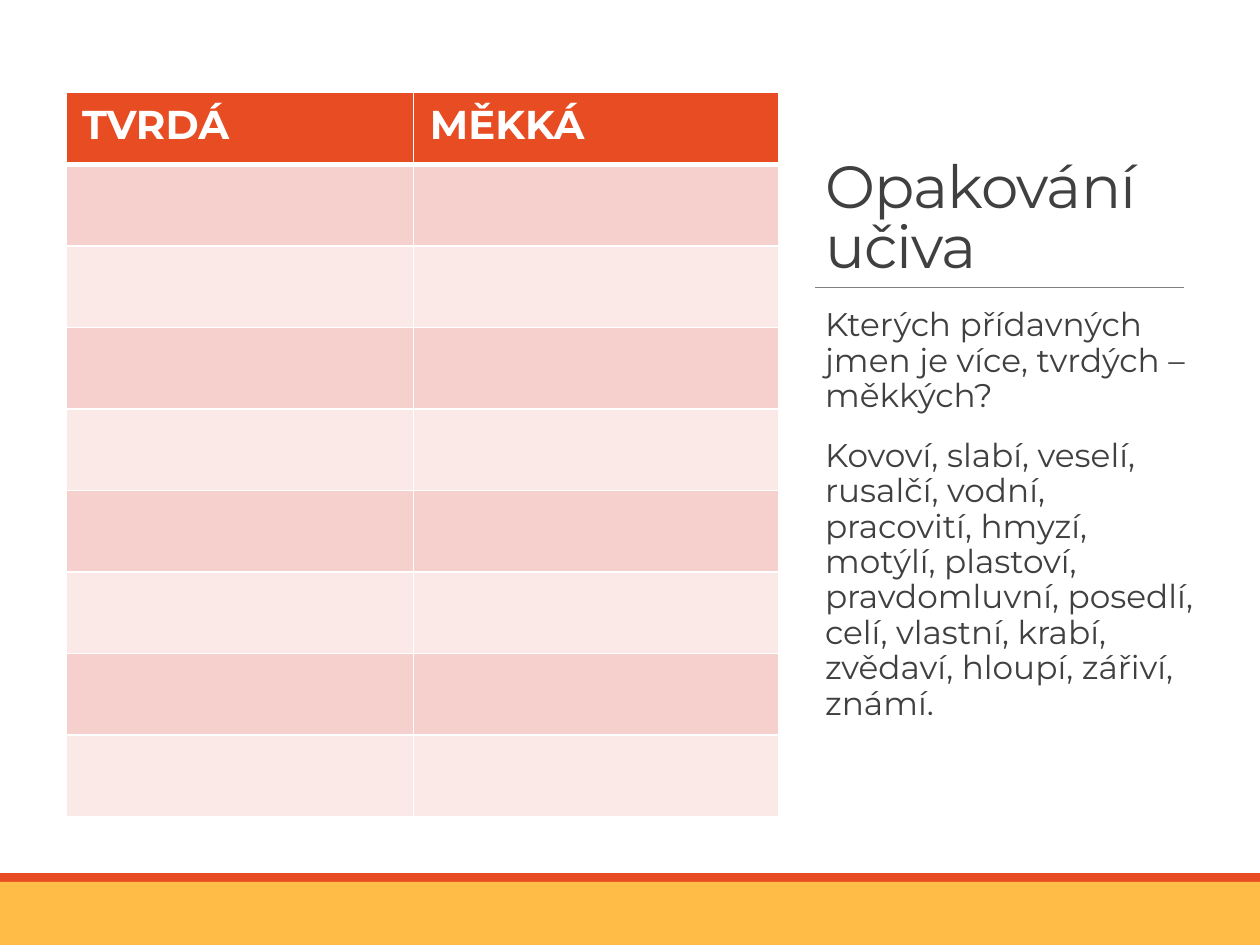
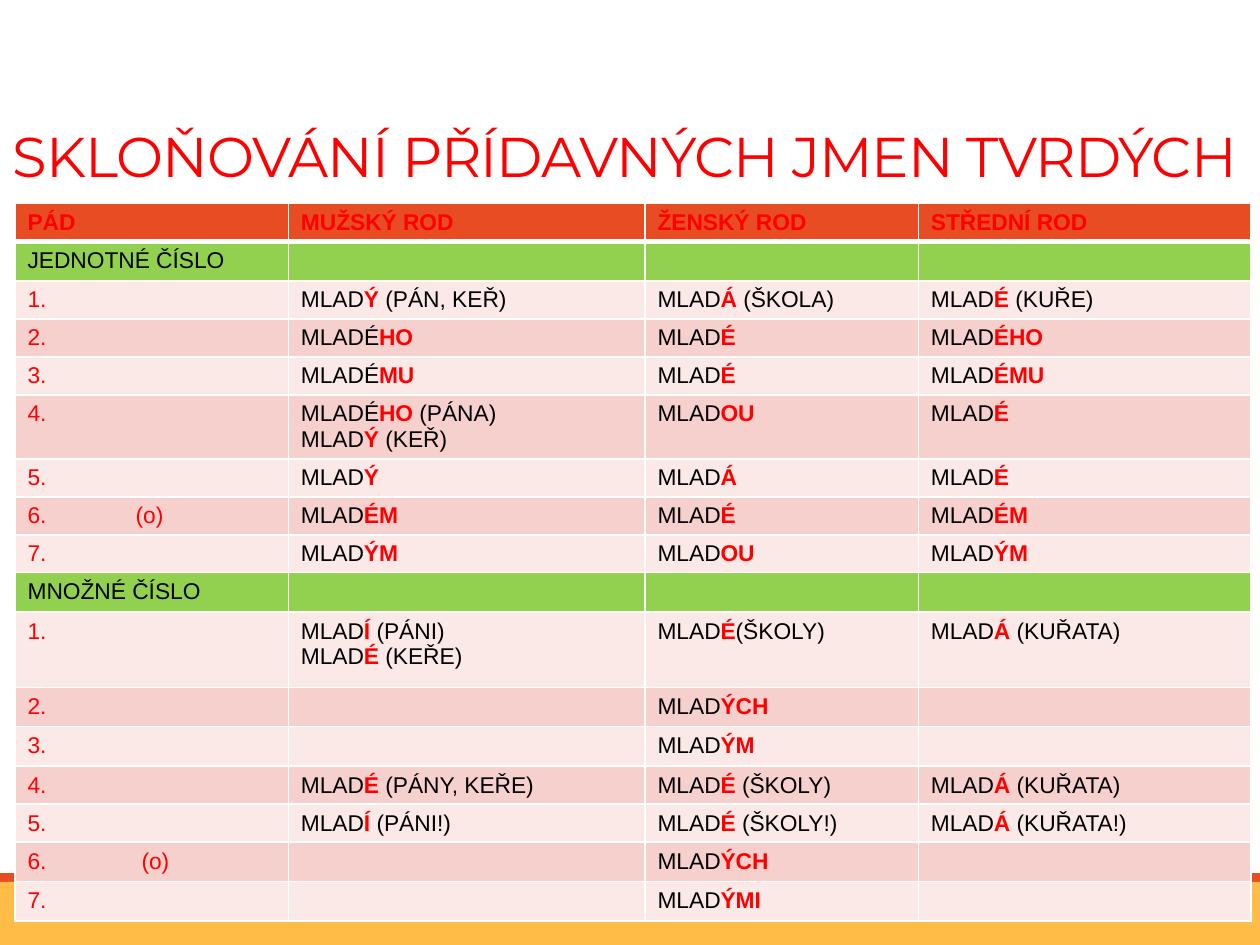
from lxml import etree
from pptx import Presentation
from pptx.dml.color import RGBColor
from pptx.enum.shapes import MSO_CONNECTOR, MSO_SHAPE
from pptx.enum.text import MSO_ANCHOR, MSO_AUTO_SIZE, PP_ALIGN
from pptx.oxml.ns import qn
from pptx.util import Pt

RECTANGLE = MSO_SHAPE.RECTANGLE
STRAIGHT = MSO_CONNECTOR.STRAIGHT
LEFT = PP_ALIGN.LEFT
BOTTOM = MSO_ANCHOR.BOTTOM
NO_AUTOFIT = MSO_AUTO_SIZE.NONE

WHITE = RGBColor(0xFF, 0xFF, 0xFF)
BLACK = RGBColor(0, 0, 0)
RED = RGBColor(0xFF, 0, 0)
ORANGE = RGBColor(0xE8, 0x4C, 0x22)
YELLOW = RGBColor(0xFF, 0xBD, 0x47)
GREEN = RGBColor(0x92, 0xD0, 0x50)
DARK_ROW = RGBColor(0xF6, 0xD0, 0xCD)
LIGHT_ROW = RGBColor(0xFB, 0xE9, 0xE8)
GREY_TEXT = RGBColor(0x40, 0x40, 0x40)
GREY_LINE = RGBColor(0x80, 0x80, 0x80)

DISPLAY_FONT = "Montserrat"
TABLE_FONT = "Arial"
WIDTH, HEIGHT = 720, 540

# Content: asterisks enclose the highlighted endings
REVIEW_TITLE = "Opakování učiva"
REVIEW_TEXT = [
    "Kterých přídavných jmen je více, tvrdých – měkkých?",
    "Kovoví, slabí, veselí, rusalčí, vodní, pracovití, hmyzí, motýlí, plastoví, "
    "pravdomluvní, posedlí, celí, vlastní, krabí, zvědaví, hloupí, zářiví, známí.",
]
REVIEW_ROWS = [["TVRDÁ", "MĚKKÁ"]] + [["", ""]] * 8

DECLENSION_TITLE = "SKLOŇOVÁNÍ PŘÍDAVNÝCH JMEN TVRDÝCH"
SINGULAR, PLURAL = "JEDNOTNÉ ČÍSLO", "MNOŽNÉ ČÍSLO"
DECLENSION_ROWS = [
    ["PÁD", "MUŽSKÝ ROD", "ŽENSKÝ ROD", "STŘEDNÍ ROD"],
    [SINGULAR, "", "", ""],
    ["1.", "MLAD*Ý* (PÁN, KEŘ)", "MLAD*Á* (ŠKOLA)", "MLAD*É* (KUŘE)"],
    ["2.", "MLADÉ*HO*", "MLAD*É*", "MLAD*ÉHO*"],
    ["3.", "MLADÉ*MU*", "MLAD*É*", "MLAD*ÉMU*"],
    ["4.", "MLADÉ*HO* (PÁNA)\nMLAD*Ý* (KEŘ)", "MLAD*OU*", "MLAD*É*"],
    ["5.", "MLAD*Ý*", "MLAD*Á*", "MLAD*É*"],
    ["6.\t(o)", "MLAD*ÉM*", "MLAD*É*", "MLAD*ÉM*"],
    ["7.", "MLAD*ÝM*", "MLAD*OU*", "MLAD*ÝM*"],
    [PLURAL, "", "", ""],
    ["1.", "MLAD*Í* (PÁNI)\nMLAD*É* (KEŘE)", "MLAD*É*(ŠKOLY)", "MLAD*Á* (KUŘATA)"],
    ["2.", "", "MLAD*ÝCH*", ""],
    ["3.", "", "MLAD*ÝM*", ""],
    ["4.", "MLAD*É* (PÁNY, KEŘE)", "MLAD*É* (ŠKOLY)", "MLAD*Á* (KUŘATA)"],
    ["5.", "MLAD*Í* (PÁNI!)", "MLAD*É* (ŠKOLY!)", "MLAD*Á* (KUŘATA!)"],
    ["6.\t(o)", "", "MLAD*ÝCH*", ""],
    ["7.", "", "MLAD*ÝMI*", ""],
]
TALL_ROWS = {5: 36.6, 10: 42.9}
TAB_STOPS = {7: 61.7, 15: 65.1}


def write(frame, text, *, size, font=DISPLAY_FONT, color=GREY_TEXT, bold=False,
          line_spacing=None, before=0, after=0, tracking=None, tab=None):
    """Fill a text frame, one paragraph a line, with marked parts in bold red."""
    for number, line in enumerate(text.split("\n")):
        paragraph = frame.paragraphs[0] if number == 0 else frame.add_paragraph()
        paragraph.alignment = LEFT
        paragraph.space_before, paragraph.space_after = Pt(before), Pt(after)
        if line_spacing:
            paragraph.line_spacing = line_spacing
        if tab:
            tab_list = etree.SubElement(paragraph._p.get_or_add_pPr(), qn("a:tabLst"))
            etree.SubElement(tab_list, qn("a:tab"), pos=str(int(Pt(tab))), algn="l")
        if not line:
            etree.SubElement(paragraph._p, qn("a:endParaRPr"), sz=str(int(size * 100)))
            continue
        for index, part in enumerate(line.split("*")):
            if not part:
                continue
            marked = index % 2 == 1
            run = paragraph.add_run()
            run.text = part
            run.font.name, run.font.size = font, Pt(size)
            run.font.bold = bold or marked
            run.font.color.rgb = RED if marked else color
            if tracking:
                run.font._element.set("spc", str(int(tracking * 100)))


def add_slide(presentation, title, box, **text_format):
    """Add a slide with its title and the two bottom bands."""
    slide = presentation.slides.add_slide(presentation.slide_layouts[5])
    shape = slide.shapes.title
    shape.left, shape.top, shape.width, shape.height = map(Pt, box)
    frame = shape.text_frame
    frame.word_wrap, frame.auto_size = True, NO_AUTOFIT
    frame.vertical_anchor = BOTTOM
    write(frame, title, line_spacing=0.85, tracking=-0.5, **text_format)
    for top, height, color in [(499, 5, ORANGE), (504, 36, YELLOW)]:
        band = slide.shapes.add_shape(RECTANGLE, 0, Pt(top), Pt(WIDTH), Pt(height))
        band.shadow.inherit = False
        band.fill.solid()
        band.fill.fore_color.rgb = color
        band.line.fill.background()
    return slide


def set_borders(cell, bottom_width):
    properties = cell._tc.get_or_add_tcPr()
    widths = [("L", 1), ("R", 1), ("T", 1), ("B", bottom_width)]
    for position, (side, width) in enumerate(widths):
        line = etree.Element(qn(f"a:ln{side}"), w=str(int(Pt(width))))
        fill = etree.SubElement(line, qn("a:solidFill"))
        etree.SubElement(fill, qn("a:srgbClr"), val=str(WHITE))
        properties.insert(position, line)


def row_color(index, label):
    if index == 0:
        return ORANGE
    if label in (SINGULAR, PLURAL):
        return GREEN
    return DARK_ROW if index % 2 else LIGHT_ROW


def add_table(slide, rows, left, top, widths, heights, margins, *, size, font,
              header_color, label_color=BLACK, tabs=None):
    """Add a banded table; margins are left/right, top and bottom."""
    table = slide.shapes.add_table(len(rows), len(widths), Pt(left), Pt(top),
                                   Pt(sum(widths)), Pt(sum(heights))).table
    for column, width in zip(table.columns, widths):
        column.width = Pt(width)
    side, upper, lower = map(Pt, margins)
    for r, texts in enumerate(rows):
        table.rows[r].height = Pt(heights[r])
        fill = row_color(r, texts[0])
        for c, text in enumerate(texts):
            cell = table.cell(r, c)
            cell.margin_left = cell.margin_right = side
            cell.margin_top, cell.margin_bottom = upper, lower
            cell.fill.solid()
            cell.fill.fore_color.rgb = fill
            set_borders(cell, 3 if r == 0 else 1)
            if r == 0:
                color = header_color
            else:
                color = label_color if c == 0 and fill != GREEN else BLACK
            tab = (tabs or {}).get(r) if c == 0 else None
            write(cell.text_frame, text, size=size, font=font, color=color,
                  bold=r == 0, tab=tab)


def build_review(presentation):
    slide = add_slide(presentation, REVIEW_TITLE, (464.4, 49.7, 218.2, 114.5), size=34)
    # Rule under the title
    rule = slide.shapes.add_connector(STRAIGHT, Pt(466), Pt(164.2), Pt(676.8), Pt(164.2))
    rule.line.color.rgb = GREY_LINE
    rule.line.width = Pt(0.5)
    etree.SubElement(rule._element.spPr, qn("a:effectLst"))
    # Question and word list
    box = slide.shapes.add_textbox(Pt(464.4), Pt(172.8), Pt(218.2), Pt(288.7))
    frame = box.text_frame
    frame.word_wrap = True
    frame.margin_left, frame.margin_right = Pt(7.2), 0
    write(frame, "\n".join(REVIEW_TEXT), size=18.7, line_spacing=0.9, before=12, after=2)
    # Sorting table
    add_table(slide, REVIEW_ROWS, 37.6, 52.9, [198.7, 209], [41] + [46.6] * 8,
              (9.4, 4.5, 4.5), size=23, font=DISPLAY_FONT, header_color=WHITE)


def build_declension(presentation):
    slide = add_slide(presentation, DECLENSION_TITLE, (0, 21.6, 745.2, 90),
                      size=32, color=RED)
    heights = [TALL_ROWS.get(r, 21.7) for r in range(len(DECLENSION_ROWS))]
    add_table(slide, DECLENSION_ROWS, 8.6, 116.3, [156.2, 203.8, 156.2, 190], heights,
              (7.2, 3.6, 3.1), size=13, font=TABLE_FONT, header_color=RED,
              label_color=RED, tabs=TAB_STOPS)


def main():
    presentation = Presentation()
    presentation.slide_width, presentation.slide_height = Pt(WIDTH), Pt(HEIGHT)
    build_review(presentation)
    build_declension(presentation)
    presentation.save("out.pptx")


if __name__ == "__main__":
    main()
